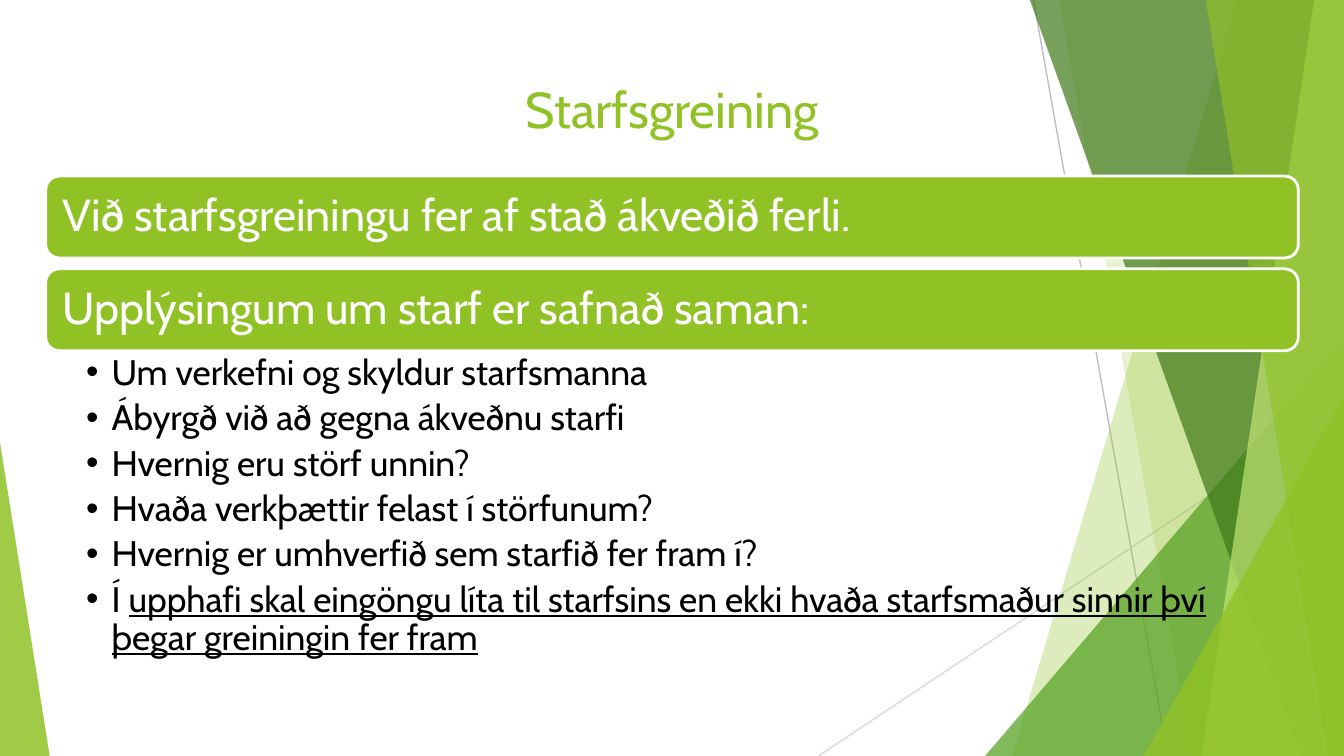
from pptx import Presentation
from pptx.dml.color import RGBColor
from pptx.enum import shapes, text
from pptx.oxml import ns
from pptx.util import Inches, Pt
from lxml import etree

THEME = {
    "font": "Cabin", "bullet_font": "Arial",
    "title_size": 27, "bar_size": 24, "bullet_size": 19,
    "lime": "90C226", "green": "54A021", "forest": "3F7819", "pale": "C0E474",
    "white": "FFFFFF", "black": "000000", "grey": "BFBFBF", "light_grey": "D9D9D9",
}
WIDTH = 10
HEIGHT = WIDTH * 9 / 16
LEFT, CONTENT_WIDTH = 0.34, 9.32
BAR_TOP, BAR_HEIGHT, BAR_PITCH = 1.31, 0.61, 0.69

TITLE = "Starfsgreining"
BARS = [
    "Við starfsgreiningu fer af stað ákveðið ferli.",
    "Upplýsingum um starf er safnað saman:",
]
BULLETS = [
    [("Um verkefni og skyldur starfsmanna", False)],
    [("Ábyrgð við að gegna ákveðnu starfi", False)],
    [("Hvernig eru störf unnin?", False)],
    [("Hvaða verkþættir felast í störfunum?", False)],
    [("Hvernig er umhverfið sem starfið fer fram í?", False)],
    [("Í ", False),
     ("upphafi skal eingöngu líta til starfsins en ekki hvaða starfsmaður "
      "sinnir því þegar greiningin fer fram", True)],
]
RAYS = [
    ((7.69, 0), (8.69, HEIGHT), "grey"),
    ((WIDTH, 3.02), (6.09, HEIGHT), "light_grey"),
]
FACETS = [
    ("band", (9.21, 7.53), "lime", 30),
    ("band", (7.88, 8.87), "lime", 20),
    ("triangle", (7.33, 2.5, 2.67, 1), "green", 72),
    ("band", (7.66, 9.68), "forest", 70),
    ("band", (9.78, 8.94), "pale", 70),
    ("band", (8.97, 9.88), "lime", 65),
    ("triangle", (8.51, 2.94, 1.49, 1), "lime", 80),
    ("triangle", (0, 3.29, 0.37, 0), "lime", 85),
]


def color(name):
    return RGBColor.from_string(THEME[name])


def fill_shape(shape, name, opacity=100):
    shape.shadow.inherit = False
    shape.fill.solid()
    shape.fill.fore_color.rgb = color(name)
    shape.line.fill.background()
    if opacity < 100:
        fill = shape._element.spPr.find(ns.qn("a:solidFill"))
        etree.SubElement(fill[0], ns.qn("a:alpha"), val=str(opacity * 1000))


def add_ray(slide, start, end, name):
    points = [Inches(value) for value in (*start, *end)]
    ray = slide.shapes.add_connector(shapes.MSO_CONNECTOR.STRAIGHT, *points)
    ray.line.color.rgb = color(name)
    ray.line.width = Pt(0.75)
    etree.SubElement(ray._element.spPr, ns.qn("a:effectLst"))


def add_band(slide, top_x, bottom_x):
    corners = [(top_x, -0.01), (WIDTH, -0.01), (WIDTH, HEIGHT), (bottom_x, HEIGHT)]
    points = [(Inches(x), Inches(y)) for x, y in corners]
    builder = slide.shapes.build_freeform(*points[0])
    builder.add_line_segments(points[1:], close=True)
    return builder.convert_to_shape()


def add_triangle(slide, left, top, width, apex):
    triangle = slide.shapes.add_shape(
        shapes.MSO_SHAPE.ISOSCELES_TRIANGLE,
        Inches(left), Inches(top), Inches(width), Inches(HEIGHT - top))
    triangle.adjustments[0] = apex
    return triangle


def set_frame(shape, anchor, left, top, right, bottom):
    frame = shape.text_frame
    frame.word_wrap = True
    frame.vertical_anchor = anchor
    frame.margin_left, frame.margin_right = Inches(left), Inches(right)
    frame.margin_top, frame.margin_bottom = Inches(top), Inches(bottom)
    return frame


def style_paragraph(paragraph, size, name, alignment=text.PP_ALIGN.LEFT):
    paragraph.alignment = alignment
    paragraph.font.name = THEME["font"]
    paragraph.font.size = Pt(THEME[size])
    paragraph.font.color.rgb = color(name)


def add_title(slide):
    box = slide.shapes.add_textbox(
        Inches(LEFT), Inches(0.49), Inches(CONTENT_WIDTH), Inches(0.63))
    frame = set_frame(box, text.MSO_ANCHOR.MIDDLE, 0.1, 0.1, 0.1, 0.1)
    frame.text = TITLE
    style_paragraph(frame.paragraphs[0], "title_size", "lime", text.PP_ALIGN.CENTER)


def add_bar(slide, index, label):
    bar = slide.shapes.add_shape(
        shapes.MSO_SHAPE.ROUNDED_RECTANGLE,
        Inches(LEFT), Inches(BAR_TOP + index * BAR_PITCH),
        Inches(CONTENT_WIDTH), Inches(BAR_HEIGHT))
    fill_shape(bar, "lime")
    bar.line.color.rgb = color("white")
    bar.line.width = Pt(1.5)
    frame = set_frame(bar, text.MSO_ANCHOR.MIDDLE, 0.1, 0.1, 0.1, 0.1)
    frame.text = label
    frame.paragraphs[0].line_spacing = 0.9
    style_paragraph(frame.paragraphs[0], "bar_size", "white")


def add_bullets(slide):
    top = BAR_TOP + (len(BARS) - 1) * BAR_PITCH + BAR_HEIGHT
    box = slide.shapes.add_textbox(
        Inches(LEFT), Inches(top), Inches(CONTENT_WIDTH), Inches(2.34))
    frame = set_frame(box, text.MSO_ANCHOR.TOP, 0.3, 0.03, 0.19, 0.03)
    for index, runs in enumerate(BULLETS):
        paragraph = frame.add_paragraph() if index else frame.paragraphs[0]
        paragraph.line_spacing = 0.9
        paragraph.space_after = Pt(3.8)
        properties = paragraph._p.get_or_add_pPr()
        properties.set("marL", str(Inches(0.19)))
        properties.set("indent", str(-Inches(0.19)))
        etree.SubElement(properties, ns.qn("a:buFont"), typeface=THEME["bullet_font"])
        etree.SubElement(properties, ns.qn("a:buChar"), char="•")
        style_paragraph(paragraph, "bullet_size", "black")
        for words, underlined in runs:
            run = paragraph.add_run()
            run.text = words
            if underlined:
                run.font.underline = True


def main():
    presentation = Presentation()
    presentation.slide_width, presentation.slide_height = Inches(WIDTH), Inches(HEIGHT)
    slide = presentation.slides.add_slide(presentation.slide_layouts[6])
    for start, end, name in RAYS:
        add_ray(slide, start, end, name)
    builders = {"band": add_band, "triangle": add_triangle}
    for kind, geometry, name, opacity in FACETS:
        fill_shape(builders[kind](slide, *geometry), name, opacity)
    add_title(slide)
    for index, label in enumerate(BARS):
        add_bar(slide, index, label)
    add_bullets(slide)
    presentation.save("out.pptx")


if __name__ == "__main__":
    main()
